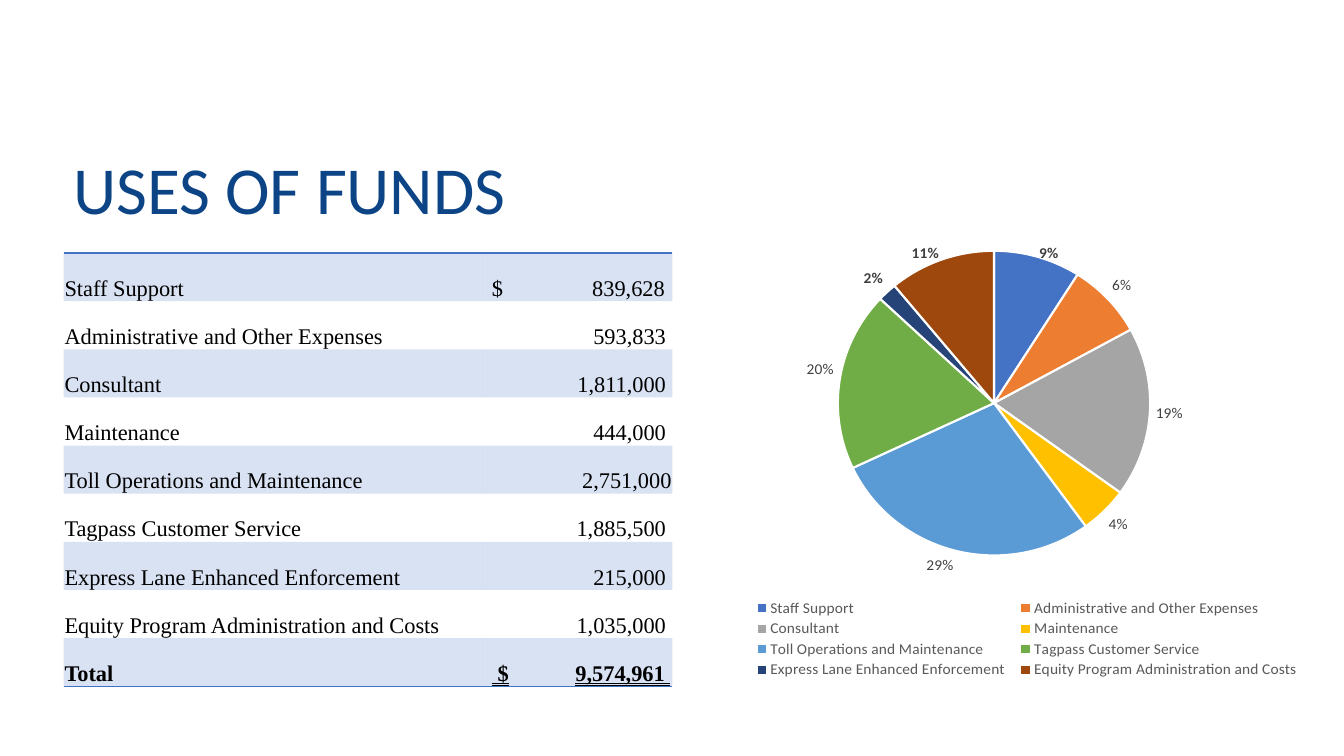
from lxml import etree
from pptx import Presentation
from pptx.chart.data import CategoryChartData
from pptx.dml.color import RGBColor
from pptx.enum.chart import XL_CHART_TYPE, XL_LABEL_POSITION, XL_LEGEND_POSITION
from pptx.enum.text import MSO_ANCHOR, MSO_UNDERLINE, PP_ALIGN
from pptx.oxml import parse_xml
from pptx.oxml.ns import nsdecls, qn
from pptx.util import Inches, Pt

PIE = XL_CHART_TYPE.PIE
OUTSIDE_END = XL_LABEL_POSITION.OUTSIDE_END
LEGEND_BOTTOM = XL_LEGEND_POSITION.BOTTOM
MIDDLE, BOTTOM = MSO_ANCHOR.MIDDLE, MSO_ANCHOR.BOTTOM
RIGHT = PP_ALIGN.RIGHT
DOUBLE_LINE = MSO_UNDERLINE.DOUBLE_LINE
BLUE = "4472C4"
NO_STYLE = "{2D5ABB26-0587-4C30-8999-92F81FD0307C}"


def style_font(font, name, size, color, bold=False):
    font.name = name
    font.size = Pt(size)
    font.bold = bold
    font.color.rgb = RGBColor.from_string(color)


def place_part(element, index, x, y, width, height, target=""):
    for old_layout in element.findall(qn("c:layout")):
        element.remove(old_layout)
    element.insert(index, parse_xml(
        f'<c:layout {nsdecls("c")}><c:manualLayout>{target}'
        '<c:xMode val="edge"/><c:yMode val="edge"/>'
        f'<c:x val="{x}"/><c:y val="{y}"/><c:w val="{width}"/><c:h val="{height}"/>'
        '</c:manualLayout></c:layout>'))


presentation = Presentation()
presentation.slide_width = Inches(13.33)
presentation.slide_height = Inches(7.5)
slide = presentation.slides.add_slide(presentation.slide_layouts[6])

title = slide.shapes.add_textbox(Inches(0.63), Inches(1.51), Inches(11.5), Inches(0.81))
title.text_frame.word_wrap = True
title.text_frame.vertical_anchor = MIDDLE
title.text_frame.text = "USES OF FUNDS"
paragraph = title.text_frame.paragraphs[0]
paragraph.line_spacing = 0.9
style_font(paragraph.runs[0].font, "Calibri", 48, "0C4485")

chart_data = CategoryChartData()
chart_data.categories = [
    "Staff Support", "Administrative and Other Expenses", "Consultant", "Maintenance ",
    "Toll Operations and Maintenance ", "Tagpass Customer Service",
    "Express Lane Enhanced Enforcement ", "Equity Program Administration and Costs"]
chart_data.add_series("Series 1", [9, 8, 18, 5, 28, 19, 2, 11])
chart = slide.shapes.add_chart(
    PIE, Inches(7.27), Inches(2.31), Inches(5.78), Inches(4.49), chart_data).chart
chart.has_title = False
style_font(chart.font, "Calibri", 11, "000000")
chart.has_legend = True
chart.legend.position = LEGEND_BOTTOM
chart.legend.include_in_layout = False
style_font(chart.legend.font, "Calibri", 11, "595959")

plot = chart.plots[0]
plot.vary_by_categories = True
series = plot.series[0]
slice_colors = ["4472C4", "ED7D31", "A5A5A5", "FFC000", "5B9BD5", "70AD47", "264478", "9E480E"]
for index, color in enumerate(slice_colors):
    slice_format = series.points[index].format
    slice_format.fill.solid()
    slice_format.fill.fore_color.rgb = RGBColor.from_string(color)
    slice_format.line.color.rgb = RGBColor.from_string("FFFFFF")
    slice_format.line.width = Pt(1.5)

labels = series.data_labels
labels.show_value = False
labels.show_percentage = True
labels.number_format = "0%"
labels.number_format_is_linked = False
labels.position = OUTSIDE_END
style_font(labels.font, "Calibri", 11, "404040", True)
for index, text in enumerate(["6%", "19%", "4%", "29%", "20%"], start=1):
    label = series.points[index].data_label
    label.text_frame.text = text
    style_font(label.text_frame.paragraphs[0].runs[0].font, "Calibri", 11, "404040")
    label.position = OUTSIDE_END

plot_area = chart.element.find(".//" + qn("c:plotArea"))
place_part(plot_area, 0, 0.18, 0.016, 0.536, 0.69, '<c:layoutTarget val="inner"/>')
place_part(chart.element.find(".//" + qn("c:legend")), 1, 0.03, 0.8, 0.95, 0.19)

funds = [
    ("Staff Support", "$\t839,628 "),
    ("Administrative and Other Expenses", "593,833 "),
    ("Consultant", "1,811,000 "),
    ("Maintenance", "444,000 "),
    ("Toll Operations and Maintenance", "2,751,000"),
    ("Tagpass Customer Service", "1,885,500 "),
    ("Express Lane Enhanced Enforcement", "215,000 "),
    ("Equity Program Administration and Costs", "1,035,000 "),
    ("Total", " $\t9,574,961 "),
]
last_row = len(funds) - 1
table = slide.shapes.add_table(
    len(funds), 2, Inches(0.63), Inches(2.51), Inches(6.04), Inches(4.3)).table
table.first_row = False
table.horz_banding = False
table._tbl.tblPr.find(qn("a:tableStyleId")).text = NO_STYLE
table.columns[0].width = Inches(4.16)
table.columns[1].width = Inches(1.88)

for row_index, row_texts in enumerate(funds):
    for column_index, text in enumerate(row_texts):
        cell = table.cell(row_index, column_index)
        cell.vertical_anchor = BOTTOM
        cell.margin_left = cell.margin_right = cell.margin_top = Inches(0.01)
        cell.margin_bottom = 0
        cell.text_frame.text = text
        paragraph = cell.text_frame.paragraphs[0]
        if "\t" in text:
            cell.margin_left = Inches(0.09)
            tabs = etree.SubElement(paragraph._p.get_or_add_pPr(), qn("a:tabLst"))
            etree.SubElement(tabs, qn("a:tab"), pos=str(Inches(1.77)), algn="r")
        elif column_index == 1:
            paragraph.alignment = RIGHT
        for run in paragraph.runs:
            style_font(run.font, "Times New Roman", 16, "000000", row_index == last_row)
            if row_index == last_row and column_index == 1:
                run.font.underline = DOUBLE_LINE

        if row_index % 2 == 0:
            cell.fill.solid()
            cell.fill.fore_color.rgb = RGBColor.from_string(BLUE)
            fill_color = cell._tc.tcPr.find(".//" + qn("a:srgbClr"))
            etree.SubElement(fill_color, qn("a:alpha"), val="20000")
        else:
            cell.fill.background()
        if row_index in (0, last_row):
            side = "lnT" if row_index == 0 else "lnB"
            cell._tc.tcPr.insert(0, parse_xml(
                f'<a:{side} {nsdecls("a")} w="{Pt(1)}"><a:solidFill>'
                f'<a:srgbClr val="{BLUE}"/></a:solidFill></a:{side}>'))

presentation.save("out.pptx")
